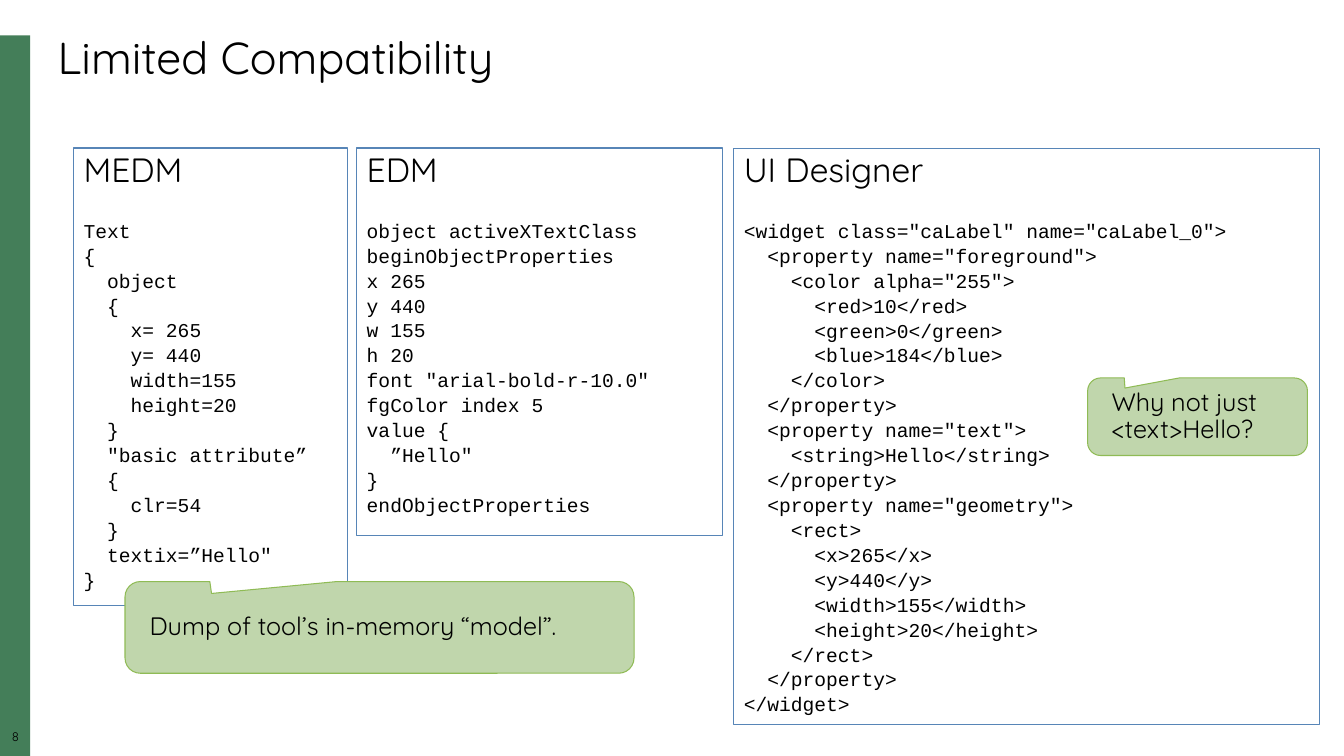
from pptx import Presentation
from pptx.dml.color import RGBColor
from pptx.enum.shapes import MSO_SHAPE
from pptx.enum.text import MSO_ANCHOR, MSO_AUTO_SIZE, PP_ALIGN
from pptx.util import Pt

BLACK = RGBColor(0x00, 0x00, 0x00)
WHITE = RGBColor(0xFF, 0xFF, 0xFF)
DARK_GREEN = RGBColor(0x44, 0x7E, 0x59)
PALE_GREEN = RGBColor(0xC0, 0xD6, 0xAC)
LEAF_GREEN = RGBColor(0x8F, 0xBB, 0x55)
BLUE = RGBColor(0x57, 0x85, 0xB7)

MEDM_CODE = """\
Text
{
  object
  {
    x= 265
    y= 440
    width=155
    height=20
  }
  "basic attribute”
  {
    clr=54
  }
  textix=”Hello"
}"""

EDM_CODE = """\
object activeXTextClass
beginObjectProperties
x 265
y 440
w 155
h 20
font "arial-bold-r-10.0"
fgColor index 5
value {
  ”Hello"
}
endObjectProperties"""

UI_CODE = """\
<widget class="caLabel" name="caLabel_0">
  <property name="foreground">
    <color alpha="255">
      <red>10</red>
      <green>0</green>
      <blue>184</blue>
    </color>
  </property>
  <property name="text">
    <string>Hello</string>
  </property>
  <property name="geometry">
    <rect>
      <x>265</x>
      <y>440</y>
      <width>155</width>
      <height>20</height>
    </rect>
  </property>
</widget>"""


def add_box(kind, left, top, width, height, fill, line=None, weight=0.75):
    sp = s.shapes.add_shape(kind, Pt(left), Pt(top), Pt(width), Pt(height))
    sp.shadow.inherit = False
    sp.fill.solid()
    sp.fill.fore_color.rgb = fill
    if line is None:
        sp.line.fill.background()
    else:
        sp.line.color.rgb = line
        sp.line.width = Pt(weight)
    sp.text_frame.word_wrap = True
    return sp


def write(tf, lines, size, font="Quicksand", spacing=0.9, align=PP_ALIGN.LEFT):
    for text in lines:
        p = tf.add_paragraph() if tf.text else tf.paragraphs[0]
        p.text = text
        p.alignment = align
        p.line_spacing = spacing
        p.font.size = Pt(size)
        p.font.name = font
        p.font.color.rgb = BLACK


prs = Presentation()
prs.slide_width, prs.slide_height = Pt(960), Pt(540)
s = prs.slides.add_slide(prs.slide_layouts[5])

# Side bar and slide number
add_box(MSO_SHAPE.RECTANGLE, 0, 25.2, 21.6, 514.8, DARK_GREEN)
number = s.shapes.add_textbox(0, Pt(522), Pt(22), Pt(12))
tf = number.text_frame
tf.word_wrap = True
tf.margin_left = tf.margin_top = tf.margin_right = tf.margin_bottom = 0
write(tf, ["8"], 9, align=PP_ALIGN.CENTER)

# Title
title = s.shapes.title
title.left, title.top, title.width, title.height = Pt(34), Pt(21.6), Pt(900), Pt(42.5)
tf = title.text_frame
tf.auto_size = MSO_AUTO_SIZE.NONE
tf.vertical_anchor = MSO_ANCHOR.TOP
write(tf, ["Limited Compatibility"], 32)

# Code panels
for heading, code, left, width, height in [
    ("EDM", EDM_CODE, 254.9, 261.4, 276.5),
    ("MEDM", MEDM_CODE, 52.6, 195.8, 326.9),
    ("UI Designer", UI_CODE, 524.2, 418.3, 411.8),
]:
    sp = add_box(MSO_SHAPE.RECTANGLE, left, 105.8, width, height, WHITE, BLUE, 0.85)
    tf = sp.text_frame
    tf.vertical_anchor = MSO_ANCHOR.TOP
    write(tf, [heading], 24)
    tf.paragraphs[0].space_after = Pt(20)
    write(tf, code.splitlines(), 14, "Courier New", 1.06)

# Callouts
for lines, left, top, width, height in [
    (["Dump of tool’s in-memory “model”."], 89.3, 415.4, 363.6, 65.5),
    (["Why not just", "<text>Hello?"], 776.9, 270, 157, 55.4),
]:
    sp = add_box(MSO_SHAPE.ROUNDED_RECTANGULAR_CALLOUT, left, top, width, height,
                 PALE_GREEN, LEAF_GREEN)
    sp.adjustments[0], sp.adjustments[1] = -0.33, -0.37
    tf = sp.text_frame
    tf.vertical_anchor = MSO_ANCHOR.MIDDLE
    tf.margin_left = tf.margin_top = tf.margin_right = tf.margin_bottom = Pt(14.4)
    write(tf, lines, 18)

prs.save("out.pptx")
